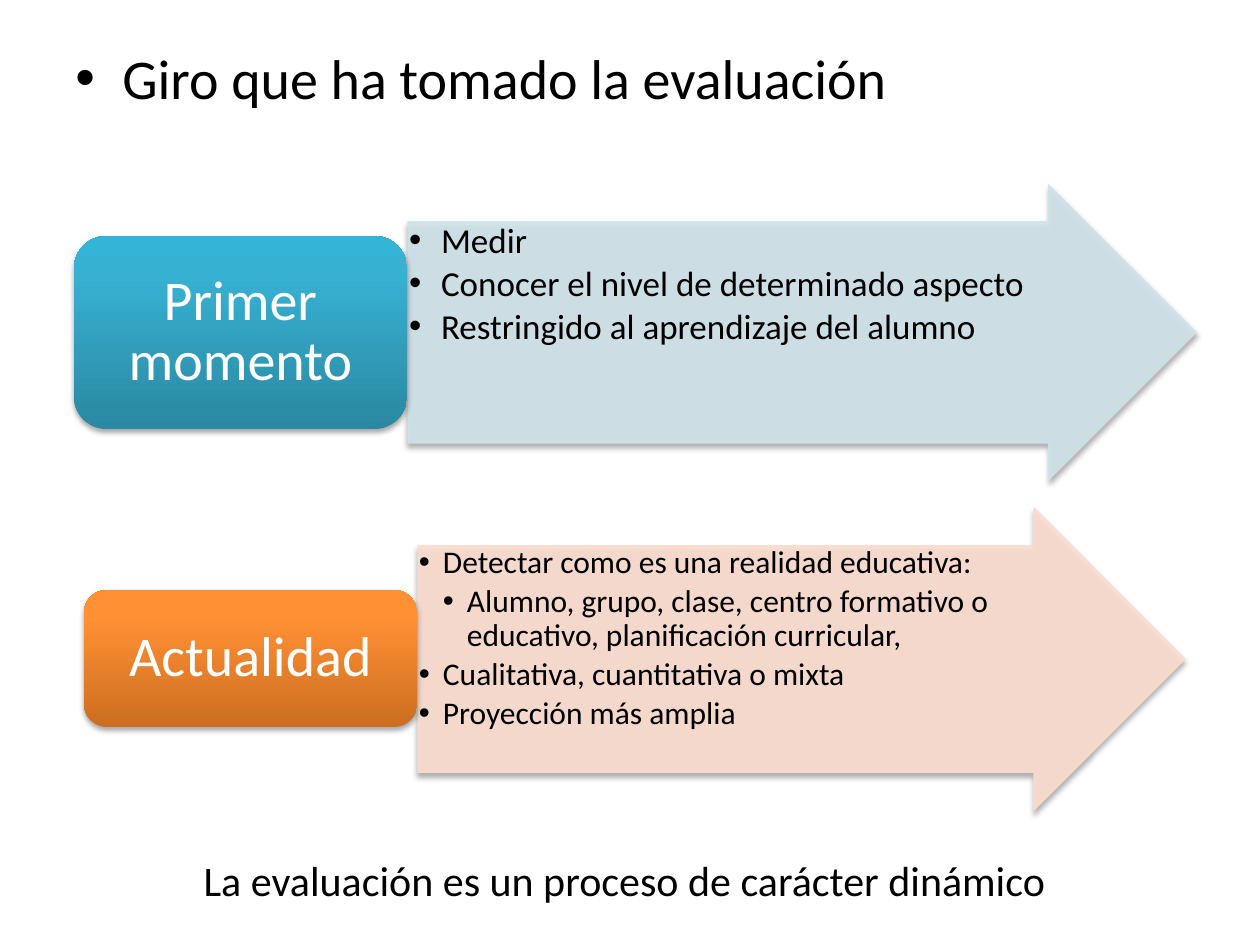
from copy import deepcopy

from lxml.etree import SubElement
from pptx import Presentation
from pptx.dml.color import RGBColor
from pptx.enum.shapes import MSO_SHAPE
from pptx.enum.text import MSO_ANCHOR, MSO_AUTO_SIZE, PP_ALIGN
from pptx.oxml.ns import qn
from pptx.util import Emu, Pt

COLORS = {
    "text": "000000",
    "white": "FFFFFF",
    "blue_pale": "D0E3EA",
    "blue": ["2A88A2", "37B1D2", "34B4D6"],
    "orange_pale": "FCDDCF",
    "orange": ["CC6E20", "FF9034", "FF9136"],
}


def px(n):
    return Emu(round(n * 914400 / 126))


def rgb(value):
    return RGBColor.from_string(value)


class SlideBuilder:
    font = "Calibri"

    def __init__(self, slide):
        self.s = slide

    def shape(self, kind, x, y, w, h):
        """Shape with a soft shadow below it."""
        sp = self.s.shapes.add_shape(kind, px(x), px(y), px(w), px(h))
        sp.shadow.inherit = False
        effects = sp._element.spPr.find(qn("a:effectLst"))
        shadow = SubElement(effects, qn("a:outerShdw"), blurRad=str(Pt(3.1)),
                            dist=str(Pt(1.8)), dir="5400000", rotWithShape="0")
        color = SubElement(shadow, qn("a:srgbClr"), val=COLORS["text"])
        SubElement(color, qn("a:alpha"), val="35000")
        return sp

    def arrow(self, x, y, w, h, color):
        sp = self.shape(MSO_SHAPE.RIGHT_ARROW, x, y, w, h)
        sp.adjustments[0], sp.adjustments[1] = 0.75, 0.5
        sp.fill.solid()
        sp.fill.fore_color.rgb = rgb(color)
        sp.line.color.rgb = rgb(color)
        sp.line.width = Pt(0.75)
        for clr in sp._element.spPr.iter(qn("a:srgbClr")):
            if clr.get("val") == color:
                SubElement(clr, qn("a:alpha"), val="90000")

    def round_box(self, x, y, w, h, colors):
        sp = self.shape(MSO_SHAPE.ROUNDED_RECTANGLE, x, y, w, h)
        sp.line.fill.background()
        sp.fill.gradient()
        sp.fill.gradient_angle = 90
        stops = sp._element.spPr.find(".//" + qn("a:gsLst"))
        stops.append(deepcopy(stops[-1]))
        for stop, position, color in zip(sp.fill.gradient_stops, (0, 0.8, 1), colors):
            stop.position = position
            stop.color.rgb = rgb(color)

    def text(self, x, y, w, h, lines, size, color="text", align=PP_ALIGN.LEFT,
             anchor=MSO_ANCHOR.TOP, insets=None, indent=0, spacing=None,
             before=0, after=0, grow=False):
        """Lines are (level, text); an indent in px turns bullets on."""
        tf = self.s.shapes.add_textbox(px(x), px(y), px(w), px(h)).text_frame
        tf.word_wrap = True
        tf.vertical_anchor = anchor
        if grow:
            tf.auto_size = MSO_AUTO_SIZE.SHAPE_TO_FIT_TEXT
        if insets:
            tf.margin_left = tf.margin_right = px(insets[0])
            tf.margin_top = tf.margin_bottom = px(insets[1])
        tf.text = "\n".join(line for _, line in lines)
        for p, (level, _) in zip(tf.paragraphs, lines):
            p.level = level
            p.alignment = align
            p.line_spacing = spacing
            p.space_before = Pt(round(size * before, 1))
            p.space_after = Pt(round(size * after, 1))
            if indent:
                pPr = p._p.get_or_add_pPr()
                pPr.set("marL", str(px(indent * max(level, 1))))
                pPr.set("indent", str(-px(indent)))
                SubElement(pPr, qn("a:buFont"), typeface="Arial")
                SubElement(pPr, qn("a:buChar"), char="•")
            for r in p.runs:
                r.font.name = self.font
                r.font.size = Pt(size)
                r.font.color.rgb = rgb(COLORS[color])

    def stage(self, arrow, box, hue, title, points, size, indent):
        """Arrow with bullet points, headed by a rounded title box."""
        x, y, w, h = arrow
        self.arrow(x, y, w, h, COLORS[hue + "_pale"])
        self.text(x, y + h / 8, w - h * 3 / 8, h * 3 / 4, points, size,
                  insets=(1, 1), indent=indent, spacing=0.9, after=0.15)
        x, y, w, h = box
        self.round_box(x, y, w, h, COLORS[hue])
        pad = h * 0.05
        self.text(x + pad, y + pad, w - 2 * pad, h - 2 * pad, [(0, title)], 32,
                  color="white", align=PP_ALIGN.CENTER, anchor=MSO_ANCHOR.MIDDLE,
                  insets=(16, 9), spacing=0.9)


def main():
    prs = Presentation()
    prs.slide_width, prs.slide_height = px(1260), px(945)
    b = SlideBuilder(prs.slides.add_slide(prs.slide_layouts[6]))

    # Heading
    b.text(63, 37, 1134, 863, [(0, "Giro que ha tomado la evaluación")], 32,
           indent=47, before=0.2)

    # First stage
    b.stage((408, 185, 788, 295), (74, 236, 333, 193), "blue", "Primer momento", [
        (1, "Medir"),
        (1, "Conocer el nivel de determinado aspecto"),
        (1, "Restringido al aprendizaje del alumno"),
    ], size=20, indent=32)

    # Present stage
    b.stage((418, 508, 767, 302), (84, 590, 333, 137), "orange", "Actualidad", [
        (1, "Detectar como es una realidad educativa:"),
        (2, "Alumno, grupo, clase, centro formativo o educativo, planificación curricular,"),
        (1, "Cualitativa, cuantitativa o mixta"),
        (1, "Proyección más amplia"),
    ], size=18, indent=24)

    # Closing line
    b.text(84, 848, 1081, 63, [(0, "La evaluación es un proceso de carácter dinámico")],
           24, align=PP_ALIGN.CENTER, grow=True)

    prs.save("out.pptx")


if __name__ == "__main__":
    main()
